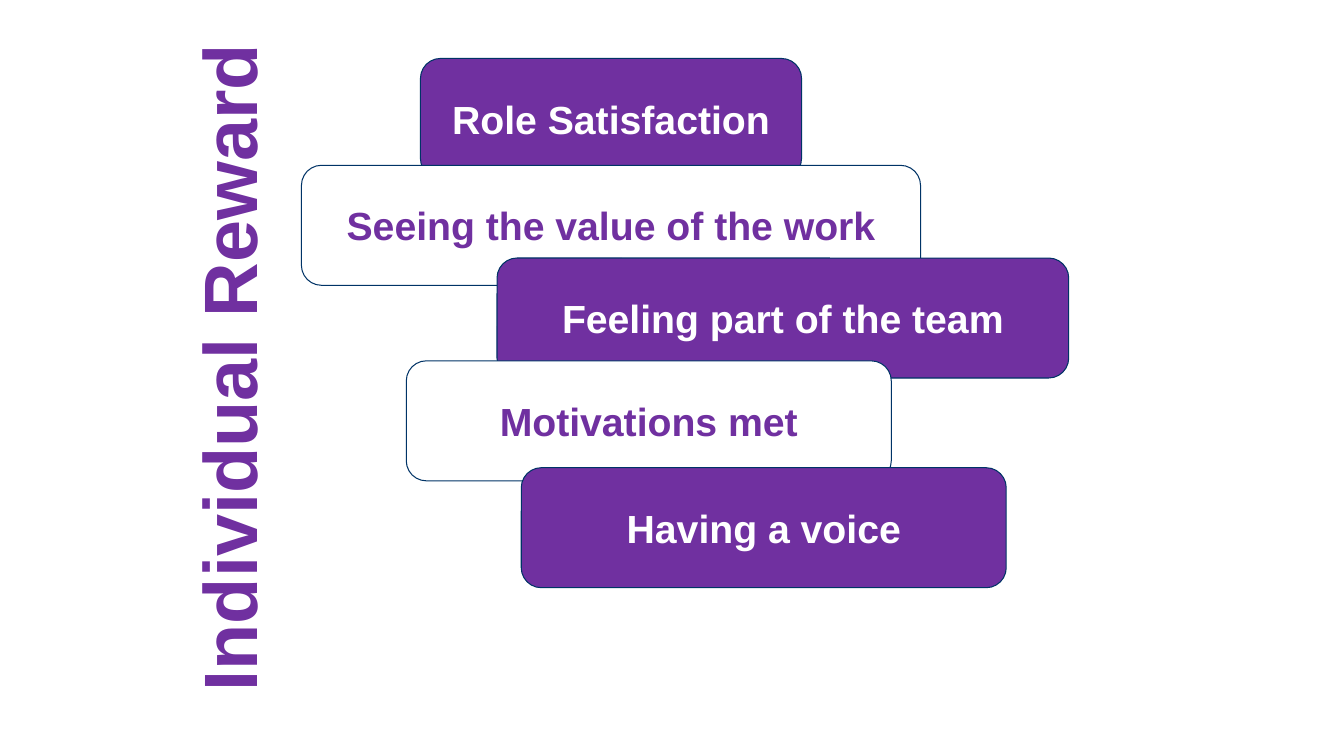
"""Build the Individual Reward slide: a vertical title beside staggered boxes."""
from pptx import Presentation
from pptx.dml.color import RGBColor
from pptx.enum.shapes import MSO_SHAPE
from pptx.enum.text import MSO_ANCHOR, PP_ALIGN
from pptx.util import Pt

TITLE = "Individual Reward"
TITLE_FRAME = (-206, 213, 890, 86)
REWARDS = [
    ("Role Satisfaction", 417, 58, 378),
    ("Seeing the value of the work", 299, 164, 614),
    ("Feeling part of the team", 493, 256, 567),
    ("Motivations met", 403, 358, 481),
    ("Having a voice", 517, 464, 481),
]
REWARD_HEIGHT = 119
COLORS = {"purple": "7030A0", "white": "FFFFFF", "navy": "003366"}
PX = 9144


def color(name):
    return RGBColor.from_string(COLORS[name])


def add_label(slide, text, frame, size, ink, anchor, align):
    label = slide.shapes.add_shape(
        MSO_SHAPE.ROUNDED_RECTANGLE, *(length * PX for length in frame))
    label.shadow.inherit = False
    body = label.text_frame
    body.text = text
    body.vertical_anchor = anchor
    paragraph = body.paragraphs[0]
    paragraph.alignment = align
    font = paragraph.runs[0].font
    font.name, font.size, font.bold = "Arial", Pt(size), True
    font.color.rgb = color(ink)
    return label


def add_title(slide):
    title = add_label(slide, TITLE, TITLE_FRAME, 54, "purple",
                      MSO_ANCHOR.BOTTOM, PP_ALIGN.LEFT)
    title.rotation = 270
    title.adjustments[0] = 0.22
    title.fill.background()
    title.line.fill.background()
    title.text_frame.word_wrap = True
    title.text_frame.paragraphs[0].line_spacing = 0.9


def add_reward(slide, index, text, left, top, width):
    fill, ink = ("white", "purple") if index % 2 else ("purple", "white")
    reward = add_label(slide, text, (left, top, width, REWARD_HEIGHT), 28, ink,
                       MSO_ANCHOR.MIDDLE, PP_ALIGN.CENTER)
    reward.fill.solid()
    reward.fill.fore_color.rgb = color(fill)
    reward.line.color.rgb = color("navy")
    reward.line.width = Pt(0.75)
    reward.text_frame.word_wrap = False


def main():
    deck = Presentation()
    deck.slide_width, deck.slide_height = 1333 * PX, 750 * PX
    slide = deck.slides.add_slide(deck.slide_layouts[6])
    add_title(slide)
    for index, reward in enumerate(REWARDS):
        add_reward(slide, index, *reward)
    deck.save("out.pptx")


if __name__ == "__main__":
    main()
